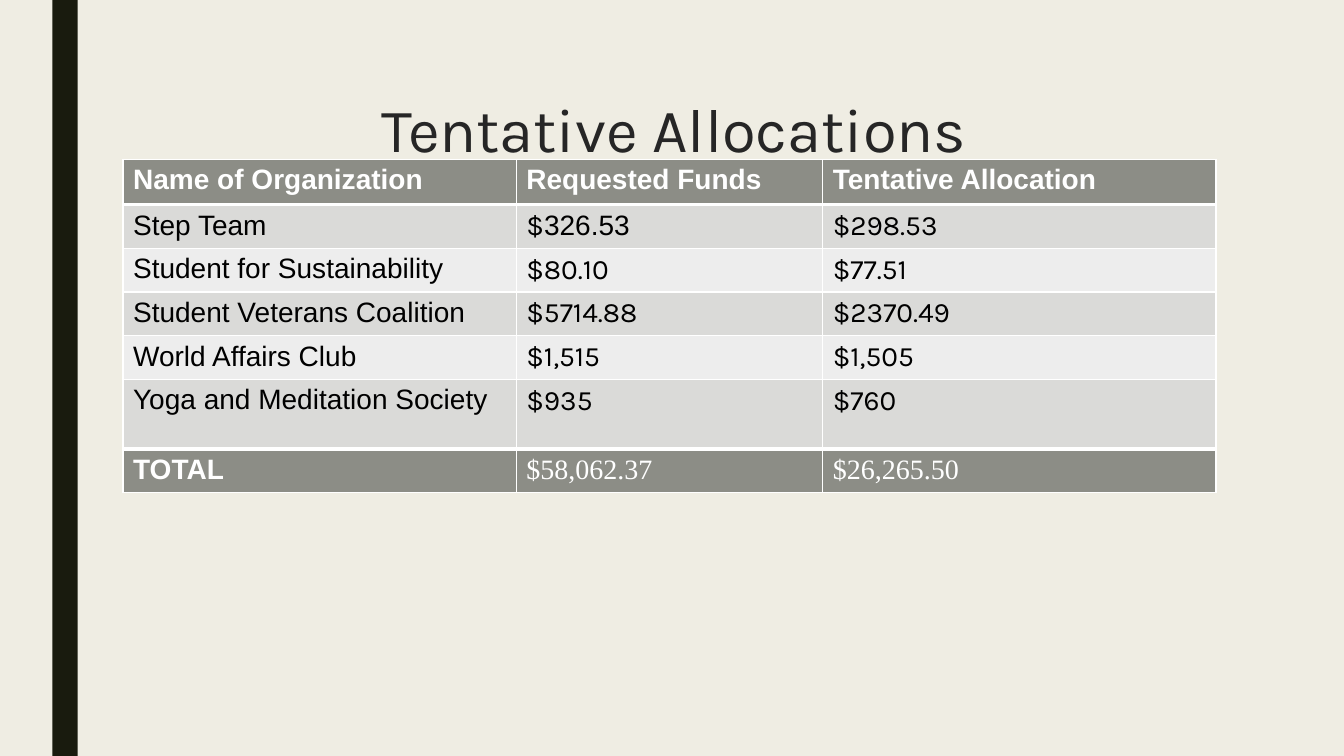
import pptx
import pptx.util
import pptx.dml.color
import pptx.enum.shapes
import pptx.enum.text
import pptx.oxml.ns
from lxml import etree

Inches = pptx.util.Inches

TITLE = "Tentative Allocations"
HEADINGS = ("Name of Organization", "Requested Funds", "Tentative Allocation")
ALLOCATIONS = [
    ("Step Team", "$326.53", "$298.53"),
    ("Student for Sustainability\u00a0", "$80.10", "$77.51"),
    ("Student Veterans Coalition\u00a0", "$5714.88", "$2370.49"),
    ("World Affairs Club", "$1,515", "$1,505"),
    ("Yoga and Meditation Society", "$935", "$760"),
]
TOTALS = ("TOTAL\u00a0", "$58,062.37", "$26,265.50")
ARIAL_AMOUNT = "$326.53"
COLUMN_WIDTHS = (3.9, 3.04, 3.9)
ROW_HEIGHTS = (0.45, 0.42, 0.42, 0.42, 0.42, 0.69, 0.42)
COLORS = {
    "background": "EFEDE3",
    "stripe": "191B0E",
    "title": "262626",
    "band": "8C8D86",
    "odd": "DADAD8",
    "even": "EDEDED",
    "body": "000000",
    "white": "FFFFFF",
}


def rgb(name):
    """Return the named palette colour."""
    return pptx.dml.color.RGBColor.from_string(COLORS[name])


def write(paragraph, text, font="Arial", size=20, color="body", bold=False):
    """Add one formatted run to a paragraph."""
    run = paragraph.add_run()
    run.text = text
    run.font.name = font
    run.font.size = pptx.util.Pt(size)
    run.font.bold = bold
    run.font.color.rgb = rgb(color)


def paint(fill, color):
    """Give a fill one solid colour."""
    fill.solid()
    fill.fore_color.rgb = rgb(color)


def add_borders(cell, top, bottom):
    """Draw white cell borders with the given top and bottom widths."""
    properties = cell._tc.get_or_add_tcPr()
    for tag, width in (("a:lnL", 1), ("a:lnR", 1), ("a:lnT", top), ("a:lnB", bottom)):
        line = etree.SubElement(properties, pptx.oxml.ns.qn(tag), w=str(pptx.util.Pt(width)))
        solid = etree.SubElement(line, pptx.oxml.ns.qn("a:solidFill"))
        etree.SubElement(solid, pptx.oxml.ns.qn("a:srgbClr"), val=COLORS["white"])


def write_cell(paragraph, text, column, is_heading, is_total):
    """Write a table entry in the font of its row and column."""
    if is_heading or (is_total and column == 0):
        write(paragraph, text, color="white", bold=True)
    elif is_total:
        write(paragraph, text, font="Times New Roman", color="white")
    elif column == 0:
        write(paragraph, text)
    elif text == ARIAL_AMOUNT:
        write(paragraph, text[0], font="Karla")
        write(paragraph, text[1:])
    else:
        write(paragraph, text, font="Karla")


def add_allocations(slide):
    """Add the table of requested and allocated funds."""
    rows = [HEADINGS, *ALLOCATIONS, TOTALS]
    last = len(rows) - 1
    table = slide.shapes.add_table(
        len(rows), len(HEADINGS), Inches(1.22), Inches(1.58),
        Inches(sum(COLUMN_WIDTHS)), Inches(sum(ROW_HEIGHTS)),
    ).table
    for column, width in zip(table.columns, COLUMN_WIDTHS):
        column.width = Inches(width)
    for r, (entries, height) in enumerate(zip(rows, ROW_HEIGHTS)):
        table.rows[r].height = Inches(height)
        band = "band" if r in (0, last) else "odd" if r % 2 else "even"
        for c, text in enumerate(entries):
            cell = table.cell(r, c)
            add_borders(cell, 3 if r in (1, last) else 1, 3 if r in (0, last - 1) else 1)
            paint(cell.fill, band)
            write_cell(cell.text_frame.paragraphs[0], text, c, r == 0, r == last)


def main():
    """Build the allocations slide."""
    deck = pptx.Presentation()
    deck.slide_width, deck.slide_height = Inches(13.33), Inches(7.5)
    slide = deck.slides.add_slide(deck.slide_layouts[6])
    paint(slide.background.fill, "background")

    stripe = slide.shapes.add_shape(
        pptx.enum.shapes.MSO_SHAPE.RECTANGLE, Inches(0.52), 0, Inches(0.25), deck.slide_height
    )
    stripe.shadow.inherit = False
    paint(stripe.fill, "stripe")
    stripe.line.fill.background()

    title = slide.shapes.add_textbox(Inches(1.44), Inches(0.84), Inches(10.5), Inches(0.86)).text_frame
    title.word_wrap = True
    title.vertical_anchor = pptx.enum.text.MSO_ANCHOR.MIDDLE
    title.paragraphs[0].alignment = pptx.enum.text.PP_ALIGN.CENTER
    write(title.paragraphs[0], TITLE, font="Karla", size=44, color="title")

    add_allocations(slide)
    deck.save("out.pptx")


if __name__ == "__main__":
    main()
